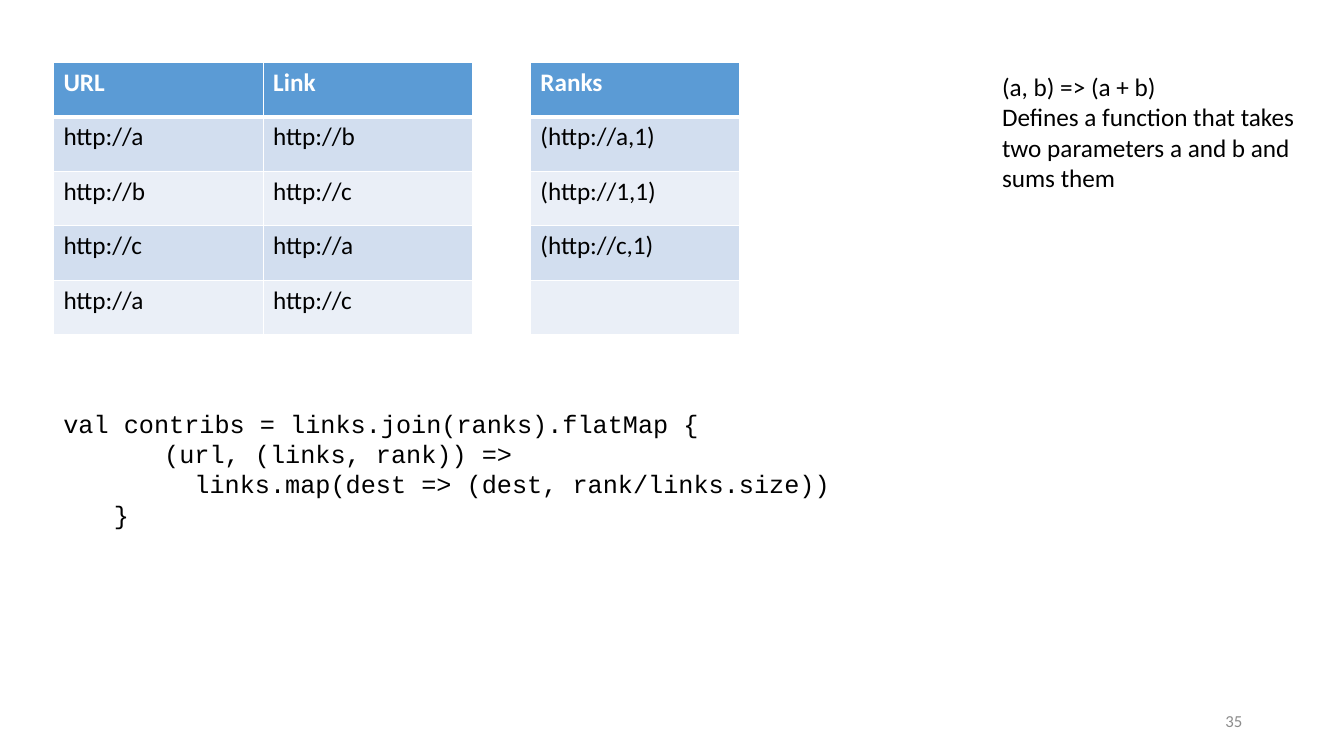
from dataclasses import dataclass

from lxml.etree import SubElement
from pptx import Presentation
from pptx.dml.color import RGBColor
from pptx.enum.text import MSO_ANCHOR, PP_ALIGN
from pptx.oxml.ns import qn
from pptx.util import Inches, Pt


@dataclass(frozen=True)
class Theme:
    body_font: str = "Calibri"
    code_font: str = "Courier New"
    body_size: int = 18
    number_size: int = 12
    text: str = "000000"
    muted: str = "8C8C8C"
    white: str = "FFFFFF"
    header: str = "5B9BD5"
    bands: tuple = ("D2DEEF", "EAEFF7")
    rule: float = 1
    header_rule: float = 3


class SlideBuilder:
    def __init__(self, slide, theme):
        self.s = slide
        self.theme = theme

    def add_run(self, p, text, color, font=None, size=None, bold=False):
        r = p.add_run()
        r.text = text
        r.font.name = font or self.theme.body_font
        r.font.size = Pt(size or self.theme.body_size)
        r.font.bold = bold
        r.font.color.rgb = RGBColor.from_string(color)

    def text(self, box, lines, color=None, font=None, size=None,
             align=PP_ALIGN.LEFT, anchor=MSO_ANCHOR.TOP):
        tf = self.s.shapes.add_textbox(*map(Inches, box)).text_frame
        tf.word_wrap = True
        tf.vertical_anchor = anchor
        for i, line in enumerate(lines):
            p = tf.add_paragraph() if i else tf.paragraphs[0]
            p.alignment = align
            self.add_run(p, line, color or self.theme.text, font, size)

    def borders(self, cell, top, bottom):
        """Draw white rules around a cell, with top and bottom widths in points."""
        rule = self.theme.rule
        tc_pr = cell._tc.get_or_add_tcPr()
        for side, width in zip("LRTB", (rule, rule, top, bottom)):
            ln = SubElement(tc_pr, qn(f"a:ln{side}"), w=str(Pt(width)))
            fill = SubElement(ln, qn("a:solidFill"))
            SubElement(fill, qn("a:srgbClr"), val=self.theme.white)

    def table(self, left, top, col_width, row_height, rows):
        t = self.theme
        n_rows, n_cols = len(rows), len(rows[0])
        table = self.s.shapes.add_table(
            n_rows, n_cols, Inches(left), Inches(top),
            Inches(col_width * n_cols), Inches(row_height * n_rows)).table
        for col in table.columns:
            col.width = Inches(col_width)
        for i, row in enumerate(rows):
            table.rows[i].height = Inches(row_height)
            is_header = i == 0
            for j, text in enumerate(row):
                cell = table.cell(i, j)
                self.borders(cell,
                             top=t.header_rule if i == 1 else t.rule,
                             bottom=t.header_rule if is_header else t.rule)
                cell.fill.solid()
                cell.fill.fore_color.rgb = RGBColor.from_string(
                    t.header if is_header else t.bands[(i - 1) % 2])
                if text:
                    self.add_run(cell.text_frame.paragraphs[0], text,
                                 t.white if is_header else t.text, bold=is_header)


LINKS = [("URL", "Link"), ("http://a", "http://b"), ("http://b", "http://c"),
         ("http://c", "http://a"), ("http://a", "http://c")]
RANKS = [("Ranks",), ("(http://a,1)",), ("(http://1,1)",), ("(http://c,1)",), ("",)]
CODE = ["val contribs = links.join(ranks).flatMap {",
        "\t\t(url, (links, rank)) =>",
        "\t\t  links.map(dest => (dest, rank/links.size))",
        "\t}"]
FUNCTION_NOTE = ["(a, b) => (a + b)",
                 "Defines a function that takes two parameters a and b and sums them"]


def main():
    prs = Presentation()
    prs.slide_width, prs.slide_height = Inches(13.33), Inches(7.5)
    theme = Theme()
    slide = SlideBuilder(prs.slides.add_slide(prs.slide_layouts[6]), theme)
    for left, rows in ((0.53, LINKS), (5.26, RANKS)):
        slide.table(left, 0.62, col_width=2.08, row_height=0.54, rows=rows)
    slide.text((0.53, 4, 10.59, 1.31), CODE, font=theme.code_font)
    slide.text((9.84, 0.66, 3.23, 1.31), FUNCTION_NOTE)
    slide.text((9.42, 6.95, 3, 0.4), ["35"], theme.muted, size=theme.number_size,
               align=PP_ALIGN.RIGHT, anchor=MSO_ANCHOR.MIDDLE)
    prs.save("out.pptx")


if __name__ == "__main__":
    main()
